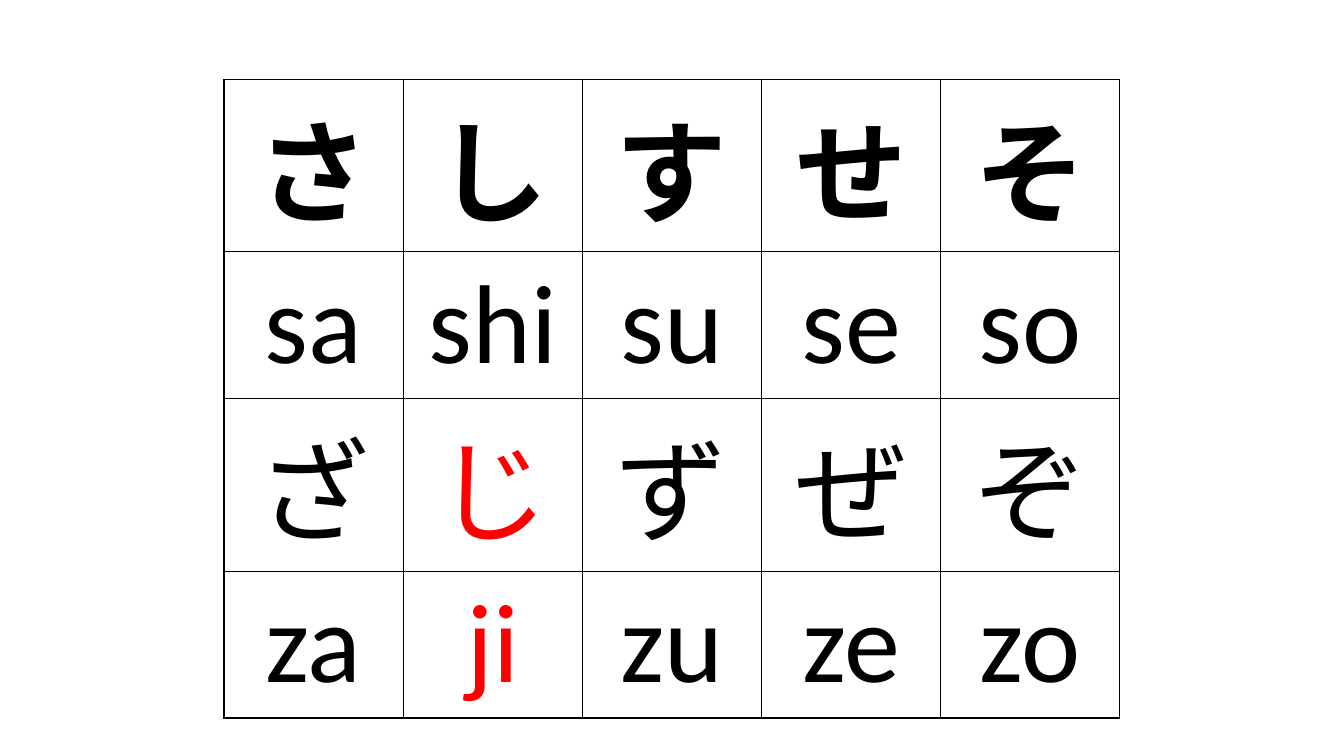
import dataclasses

import lxml.etree
import pptx
import pptx.dml.color
import pptx.enum.text
import pptx.oxml.ns
import pptx.util

Pt = pptx.util.Pt


@dataclasses.dataclass(frozen=True)
class Theme:
    font: str = "Calibri"
    size: int = 80
    ink: str = "000000"
    accent: str = "FF0000"
    paper: str = "FFFFFF"
    border: int = 1


THEME = Theme()
KANA_ROWS = ["さ し す せ そ", "sa shi su se so", "ざ じ ず ぜ ぞ", "za ji zu ze zo"]
IRREGULAR = {"じ", "ji"}


def colour(value):
    return pptx.dml.color.RGBColor.from_string(value)


def apply_format(target, values):
    for name, value in values.items():
        setattr(target, name, value)


def add_borders(cell):
    properties = cell._tc.get_or_add_tcPr()
    tag = pptx.oxml.ns.qn
    for position, side in enumerate(("lnL", "lnR", "lnT", "lnB")):
        line = lxml.etree.Element(tag(f"a:{side}"), w=str(Pt(THEME.border)))
        fill = lxml.etree.SubElement(line, tag("a:solidFill"))
        lxml.etree.SubElement(fill, tag("a:srgbClr"), val=THEME.ink)
        properties.insert(position, line)


def write_cell(cell, text, bold):
    cell.fill.solid()
    cell.fill.fore_color.rgb = colour(THEME.paper)
    add_borders(cell)
    para = cell.text_frame.paragraphs[0]
    para.alignment = pptx.enum.text.PP_ALIGN.CENTER
    span = para.add_run()
    span.text = text
    apply_format(span.font, {"name": THEME.font, "size": Pt(THEME.size), "bold": bold})
    span.font.color.rgb = colour(THEME.accent if text in IRREGULAR else THEME.ink)


def add_kana_table(page, left, top, width, height):
    rows = [row.split() for row in KANA_ROWS]
    frame = page.shapes.add_table(
        len(rows), len(rows[0]), Pt(left), Pt(top), Pt(width), Pt(height)
    )
    table = frame.table
    apply_format(table, {"first_row": False, "horz_banding": False})
    for row_index, row in enumerate(rows):
        for column_index, text in enumerate(row):
            write_cell(table.cell(row_index, column_index), text, row_index == 0)


def main():
    deck = pptx.Presentation()
    apply_format(deck, {"slide_width": Pt(960), "slide_height": Pt(540)})
    page = deck.slides.add_slide(deck.slide_layouts[6])
    add_kana_table(page, 160, 56.7, 640, 412.6)
    deck.save("out.pptx")


if __name__ == "__main__":
    main()
